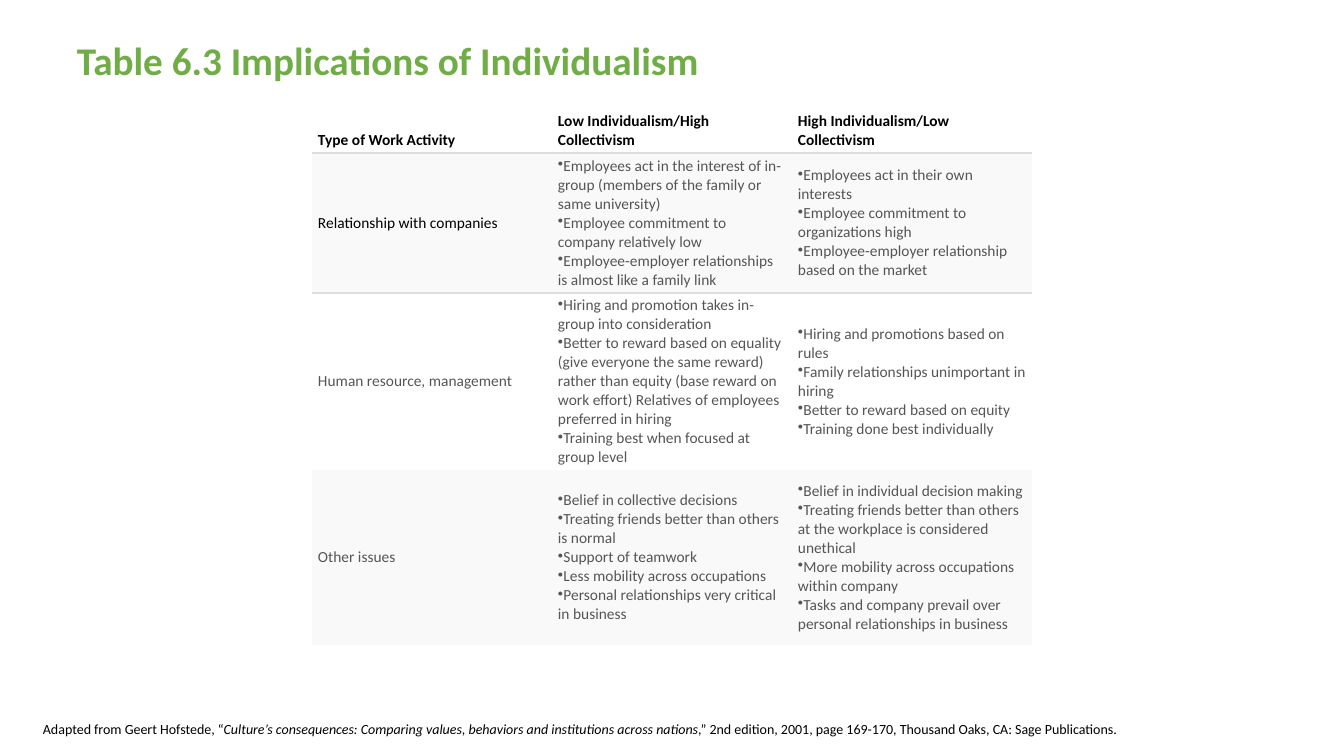
import pptx
import pptx.util
import pptx.dml.color
import pptx.enum.text
import pptx.oxml
import pptx.oxml.ns

SCALE = 914400 / 100.8
ANCHOR = pptx.enum.text.MSO_ANCHOR
NS = pptx.oxml.ns.nsdecls("a")


def px(n):
    return pptx.util.Emu(round(n * SCALE))


def style(font, size, color, bold=False):
    font.name = "Calibri"
    font.size = pptx.util.Pt(size)
    font.bold = bold
    font.color.rgb = pptx.dml.color.RGBColor.from_string(color)


deck = pptx.Presentation()
deck.slide_width, deck.slide_height = px(1344), px(756)
slide = deck.slides.add_slide(deck.slide_layouts[6])

# Title
title = slide.shapes.add_textbox(px(67), px(26), px(1185), px(73)).text_frame
title.word_wrap = True
title.vertical_anchor = ANCHOR.MIDDLE
title.text = "Table 6.3 Implications of Individualism"
title.paragraphs[0].line_spacing = 0.9
style(title.paragraphs[0].runs[0].font, 28, "70AD47", True)

# Table wording: each cell is a list of paragraphs
rows = [
    [["Type of Work Activity"],
     ["Low Individualism/High Collectivism"],
     ["High Individualism/Low Collectivism"]],
    [["Relationship with companies"],
     ["Employees act in the interest of in-group (members of the family or same university)",
      "Employee commitment to company relatively low",
      "Employee-employer relationships is almost like a family link"],
     ["Employees act in their own interests",
      "Employee commitment to organizations high",
      "Employee-employer relationship based on the market"]],
    [["Human resource, management"],
     ["Hiring and promotion takes in-group into consideration",
      "Better to reward based on equality (give everyone the same reward) rather than equity "
      "(base reward on work effort) Relatives of employees preferred in hiring",
      "Training best when focused at group level"],
     ["Hiring and promotions based on rules",
      "Family relationships unimportant in hiring",
      "Better to reward based on equity",
      "Training done best individually"]],
    [["Other issues"],
     ["Belief in collective decisions",
      "Treating friends better than others is normal",
      "Support of teamwork",
      "Less mobility across occupations",
      "Personal relationships very critical in business"],
     ["Belief in individual decision making",
      "Treating friends better than others at the workplace is considered unethical",
      "More mobility across occupations within company",
      "Tasks and company prevail over personal relationships in business"]],
]
heights = [44, 140, 177, 175]

# Table with no preset style
frame = slide.shapes.add_table(4, 3, px(312), px(109), px(720), px(sum(heights)))
table = frame.table
table.horz_banding = False
table._tbl.tblPr[0].text = "{2D5ABB26-0587-4C30-8999-92F81FD0307C}"
for col in table.columns:
    col.width = px(240)

for r, row in enumerate(rows):
    table.rows[r].height = px(heights[r])
    for c, lines in enumerate(row):
        cell = table.cell(r, c)
        cell.margin_left = cell.margin_right = px(6)
        cell.margin_top = cell.margin_bottom = px(3)
        cell.vertical_anchor = ANCHOR.MIDDLE if r else ANCHOR.BOTTOM

        # Shade odd rows
        if r % 2:
            cell.fill.solid()
            cell.fill.fore_color.rgb = pptx.dml.color.RGBColor.from_string("F9F9F9")
        else:
            cell.fill.background()

        # Rule between header and body
        if r < 2:
            side = "lnT" if r else "lnB"
            rule = pptx.oxml.parse_xml(
                f'<a:{side} {NS} w="12700"><a:solidFill><a:srgbClr val="DDDDDD"/>'
                f'</a:solidFill></a:{side}>')
            cell._tc.get_or_add_tcPr().insert(0, rule)

        # Text, with bullets in the body columns
        cell.text_frame.text = "\n".join(lines)
        dark = r == 0 or (r, c) == (1, 0)
        for para in cell.text_frame.paragraphs:
            if r and c:
                props = para._p.get_or_add_pPr()
                props.set("marL", "0")
                props.set("indent", "0")
                props.append(pptx.oxml.parse_xml(f'<a:buChar {NS} char="•"/>'))
            style(para.runs[0].font, 11, "000000" if dark else "555555", r == 0)

# Citation
note = slide.shapes.add_textbox(px(33), px(716), px(1111), px(44)).text_frame
note.word_wrap = True
parts = [
    ("Adapted from Geert Hofstede, “", False),
    ("Culture’s consequences: Comparing values, behaviors and institutions across nations", True),
    (",” 2nd edition, 2001, page 169-170, Thousand Oaks, CA: Sage Publications.", False),
]
for text, slant in parts:
    run = note.paragraphs[0].add_run()
    run.text = text
    style(run.font, 10, "000000")
    run.font.italic = slant

deck.save("out.pptx")
